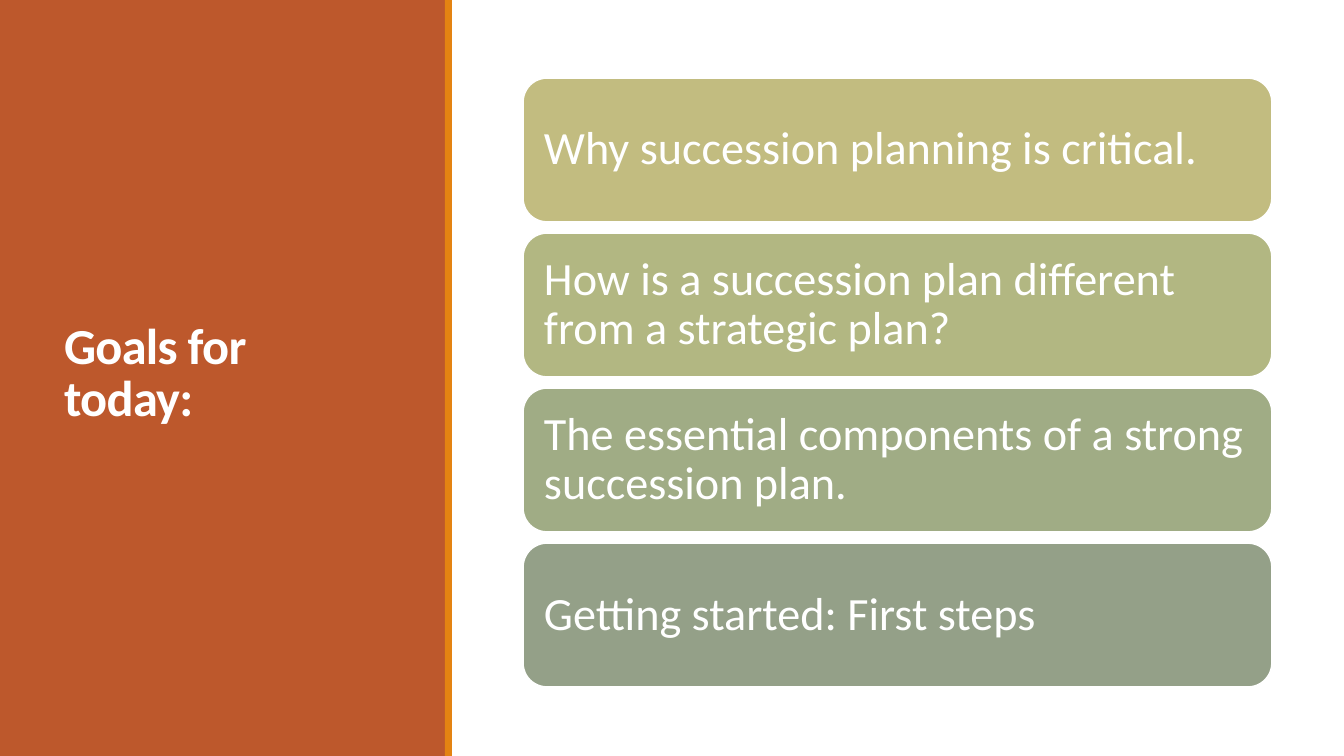
from pptx import Presentation
from pptx.dml.color import RGBColor
from pptx.enum.shapes import MSO_SHAPE
from pptx.enum.text import MSO_ANCHOR, PP_ALIGN
from pptx.util import Emu, Pt

SLIDE_W, SLIDE_H = 1344, 756
EMU_PER_PX = 12192000 / SLIDE_W
COLORS = {
    "white": "FFFFFF",
    "rust": "BD582C",
    "orange": "E48312",
    "khaki": "C2BC80",
    "olive": "B2B782",
    "sage": "A0AC85",
    "moss": "94A088",
}


def px(*lengths):
    """Turn pixel lengths into a list of EMU lengths."""
    return [Emu(round(length * EMU_PER_PX)) for length in lengths]


def write_text(shape, text, size, line_spacing, inset, bold=False, tracking=0):
    frame = shape.text_frame
    frame.word_wrap = True
    frame.vertical_anchor = MSO_ANCHOR.MIDDLE
    frame.margin_left, frame.margin_top, frame.margin_right, frame.margin_bottom = px(*inset)
    paragraph = frame.paragraphs[0]
    paragraph.alignment = PP_ALIGN.LEFT
    paragraph.line_spacing = line_spacing
    run = paragraph.add_run()
    run.text = text
    run.font.name = "Calibri"
    run.font.size = Pt(size)
    run.font.bold = bold
    run.font.color.rgb = RGBColor.from_string(COLORS["white"])
    if tracking:
        run.font._element.set("spc", str(round(tracking * 100)))


prs = Presentation()
prs.slide_width, prs.slide_height = px(SLIDE_W, SLIDE_H)
slide = prs.slides.add_slide(prs.slide_layouts[6])
shapes = slide.shapes

# Side panel with its accent stripe
for left, width, color in [(0, 447, "rust"), (445, 7, "orange")]:
    band = shapes.add_shape(MSO_SHAPE.RECTANGLE, *px(left, 0, width, SLIDE_H))
    band.shadow.inherit = False
    band.fill.solid()
    band.fill.fore_color.rgb = RGBColor.from_string(COLORS[color])
    band.line.fill.background()

title = shapes.add_textbox(*px(54, 57, 330, 636))
write_text(title, "Goals for today:", size=36, line_spacing=0.85,
           inset=(10, 5, 10, 5), bold=True, tracking=-0.5)

# Goal cards
CARD_LEFT, CARD_TOP, CARD_W, CARD_H, CARD_PITCH = 523, 78, 749, 144, 155
goals = [
    ("Why succession planning is critical.", "khaki"),
    ("How is a succession plan different from a strategic plan?", "olive"),
    ("The essential components of a strong succession plan.", "sage"),
    ("Getting started: First steps", "moss"),
]
for row, (goal, color) in enumerate(goals):
    card = shapes.add_shape(
        MSO_SHAPE.ROUNDED_RECTANGLE,
        *px(CARD_LEFT, CARD_TOP + row * CARD_PITCH, CARD_W, CARD_H))
    card.shadow.inherit = False
    card.fill.solid()
    card.fill.fore_color.rgb = RGBColor.from_string(COLORS[color])
    card.line.color.rgb = RGBColor.from_string(COLORS["white"])
    card.line.width = Pt(1.25)
    write_text(card, goal, size=33, line_spacing=0.9, inset=(14, 14, 14, 14))

prs.save("out.pptx")
